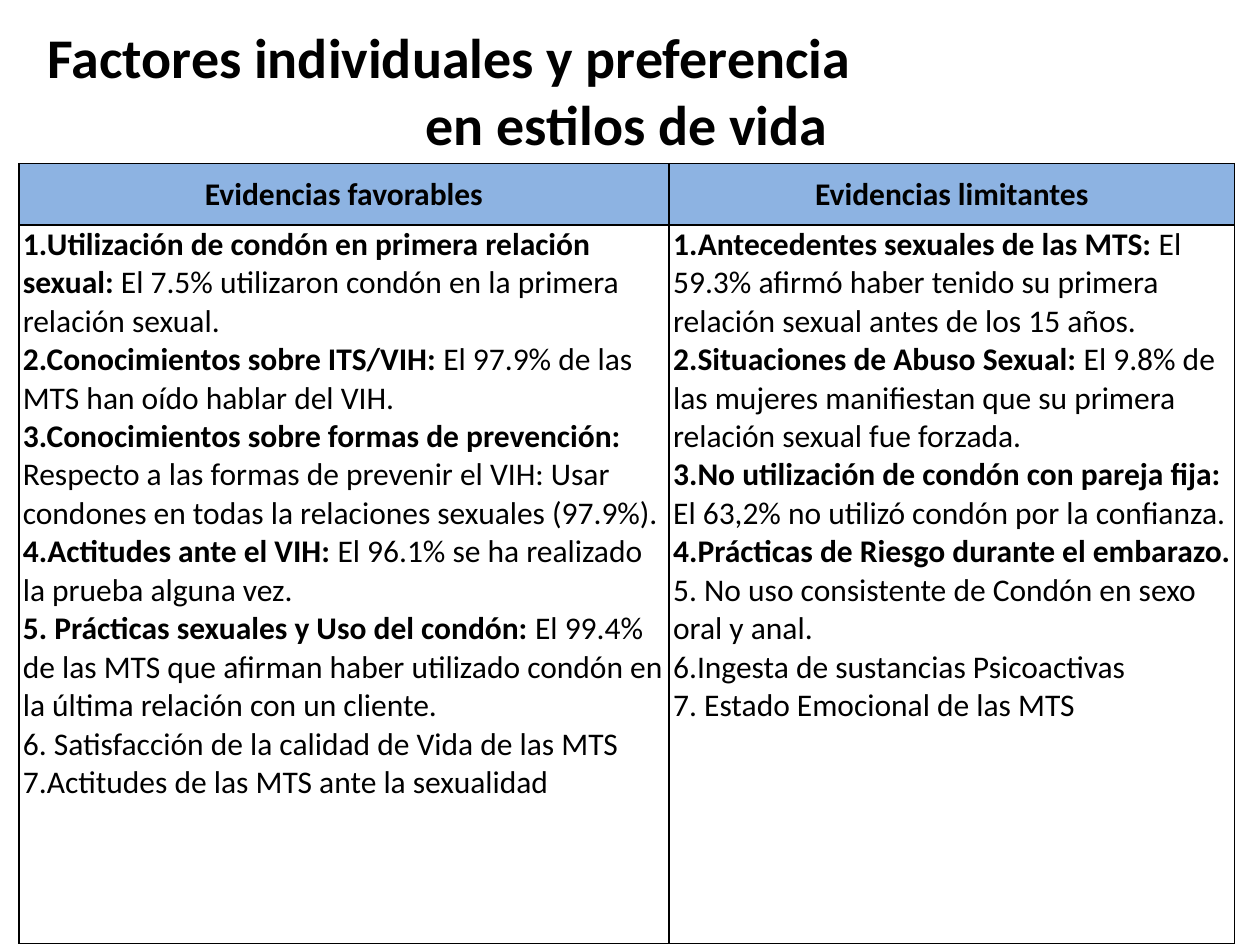
"""Build a slide with a title and a two-column table of evidence."""
from lxml.etree import fromstring
from pptx import Presentation
from pptx.dml.color import RGBColor
from pptx.enum.text import MSO_ANCHOR, PP_ALIGN
from pptx.oxml.ns import nsdecls
from pptx.util import Cm, Pt


def paint(fill, tone):
    fill.solid()
    fill.fore_color.rgb = RGBColor.from_string(tone)


def write(para, text, size, bold):
    run = para.add_run()
    run.text = text
    run.font.name = "Calibri"
    run.font.size = Pt(size)
    run.font.bold = bold
    paint(run.font.fill, "000000")


heads = ["Evidencias favorables", "Evidencias limitantes"]
lists = [
    [
        ("1.Utilización de condón en primera relación sexual: ",
         "El 7.5% utilizaron condón en la primera relación sexual."),
        ("2.Conocimientos sobre ITS/VIH: ",
         "El 97.9% de las MTS han oído hablar del VIH."),
        ("3.Conocimientos sobre formas de prevención: ",
         "Respecto a las formas de prevenir el VIH: Usar condones en todas "
         "la relaciones sexuales (97.9%)."),
        ("4.Actitudes ante el VIH: ",
         "El 96.1% se ha realizado la prueba alguna vez."),
        ("5. Prácticas sexuales y Uso del condón: ",
         "El 99.4% de las MTS que afirman haber utilizado condón en la "
         "última relación con un cliente."),
        ("", "6. Satisfacción de la calidad de Vida de las MTS"),
        ("", "7.Actitudes de las MTS ante la sexualidad"),
    ],
    [
        ("1.Antecedentes sexuales de las MTS: ",
         "El 59.3% afirmó haber tenido su primera relación sexual antes de "
         "los 15 años."),
        ("2.Situaciones de Abuso Sexual: ",
         "El 9.8% de las mujeres manifiestan que su primera relación sexual "
         "fue forzada."),
        ("3.No utilización de condón con pareja fija: ",
         "El 63,2% no utilizó condón por la confianza."),
        ("4.Prácticas de Riesgo durante el embarazo.", ""),
        ("", "5. No uso consistente de Condón en sexo oral y anal."),
        ("", "6.Ingesta de sustancias Psicoactivas"),
        ("", "7. Estado Emocional de las MTS"),
    ],
]

deck = Presentation()
deck.slide_width = Cm(25.4)
deck.slide_height = Cm(19.05)
slide = deck.slides.add_slide(deck.slide_layouts[6])

grid = slide.shapes.add_table(
    2, 2, Cm(0.38), Cm(3.3), Cm(24.51), Cm(15.72)).table
for col, wide in zip(grid.columns, (13.11, 11.4)):
    col.width = Cm(wide)
for row, high in zip(grid.rows, (1.24, 14.48)):
    row.height = Cm(high)

for cell in grid.iter_cells():
    cell.margin_left = cell.margin_right = Cm(0.08)
    cell.margin_top = cell.margin_bottom = 0
    paint(cell.fill, "FFFFFF")
    props = cell._tc.get_or_add_tcPr()
    for spot, side in enumerate("LRTB"):
        props.insert(spot, fromstring(
            f'<a:ln{side} {nsdecls("a")} w="{Pt(1)}"><a:solidFill>'
            f'<a:srgbClr val="000000"/></a:solidFill></a:ln{side}>'))

for num, (head, items) in enumerate(zip(heads, lists)):
    top = grid.cell(0, num)
    paint(top.fill, "8DB3E2")
    top.vertical_anchor = MSO_ANCHOR.MIDDLE
    para = top.text_frame.paragraphs[0]
    para.alignment = PP_ALIGN.CENTER
    write(para, head, 18, True)
    frame = grid.cell(1, num).text_frame
    for line, parts in enumerate(items):
        para = frame.add_paragraph() if line else frame.paragraphs[0]
        for text, bold in zip(parts, (True, False)):
            if text:
                write(para, text, 18, bold)

frame = slide.shapes.add_textbox(
    Cm(0.38), Cm(0.33), Cm(24.51), Cm(3)).text_frame
frame.word_wrap = True
first, last = frame.paragraphs[0], frame.add_paragraph()
first.alignment = PP_ALIGN.LEFT
first._p.get_or_add_pPr().set("marL", str(Cm(0.33)))
last.alignment = PP_ALIGN.CENTER
write(first, "Factores individuales y preferencia", 32, True)
write(last, "en estilos de vida", 32, True)

deck.save("out.pptx")
